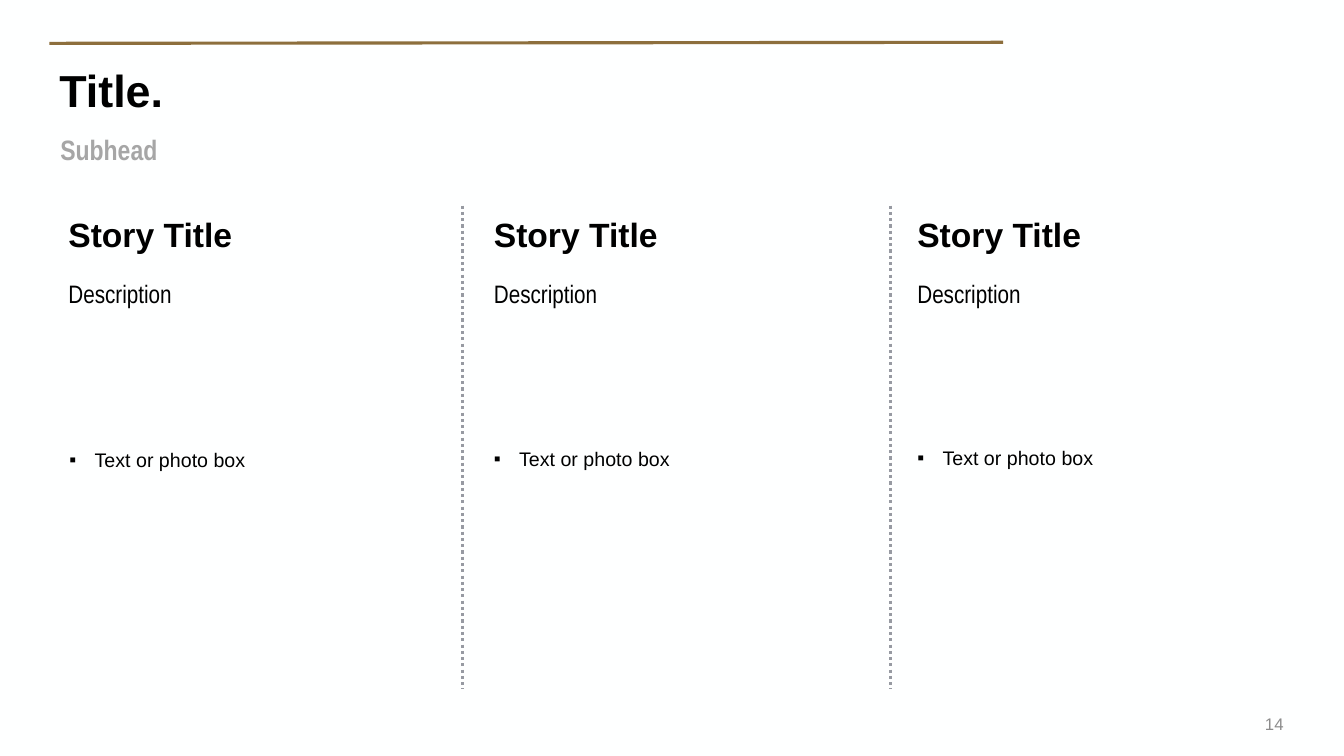
from lxml import etree
from pptx import Presentation
from pptx.dml.color import RGBColor
from pptx.enum.dml import MSO_LINE_DASH_STYLE as Dash
from pptx.enum.shapes import MSO_CONNECTOR as Connector
from pptx.enum.text import MSO_ANCHOR as Anchor, PP_ALIGN as Align
from pptx.oxml.ns import qn
from pptx.util import Inches, Pt


def color(hex_string):
    return RGBColor.from_string(hex_string)


class StorySlide:
    BACKGROUND = "FEFFFF"
    BLACK = "000000"
    SUBHEAD_GRAY = "A6A6A6"
    NUMBER_GRAY = "8C8C8C"
    GOLD = "8D6F3D"
    DIVIDER_GRAY = "979AA2"
    SANS = "Arial"
    NARROW = "Arial Narrow"

    def __init__(self, presentation):
        self.slide = presentation.slides.add_slide(presentation.slide_layouts[6])
        fill = self.slide.background.fill
        fill.solid()
        fill.fore_color.rgb = color(self.BACKGROUND)

    def line(self, start, end, line_color, dash=None):
        connector = self.slide.shapes.add_connector(
            Connector.STRAIGHT, *(Inches(value) for value in (*start, *end)))
        connector.line.color.rgb = color(line_color)
        connector.line.width = Pt(2.25)
        if dash is not None:
            connector.line.dash_style = dash
        etree.SubElement(connector._element.spPr, qn("a:effectLst"))

    def text(self, words, box, size, font_name=SANS, text_color=BLACK, bold=False,
             anchor=Anchor.TOP, align=Align.LEFT, spacing=0.9, bullet=None):
        shape = self.slide.shapes.add_textbox(*(Inches(value) for value in box))
        frame = shape.text_frame
        frame.word_wrap = True
        frame.vertical_anchor = anchor
        paragraph = frame.paragraphs[0]
        paragraph.text = words
        paragraph.alignment = align
        paragraph.line_spacing = spacing
        if bullet:
            self.add_bullet(paragraph, bullet)
        font = paragraph.font
        font.name = font_name
        font.size = Pt(size)
        font.bold = bold
        font.color.rgb = color(text_color)

    def add_bullet(self, paragraph, character):
        properties = paragraph._p.get_or_add_pPr()
        properties.set("marL", str(Inches(0.25)))
        properties.set("indent", str(Inches(-0.25)))
        etree.SubElement(properties, qn("a:buFont"), typeface=self.SANS)
        etree.SubElement(properties, qn("a:buChar"), char=character)


def main():
    presentation = Presentation()
    presentation.slide_width = Inches(13.33)
    presentation.slide_height = Inches(7.5)
    page = StorySlide(presentation)

    # Header
    page.line((9.95, 0.42), (0.49, 0.43), page.GOLD)
    page.text("Title.", (0.49, 0.61, 8.53, 0.63), 32, bold=True, anchor=Anchor.MIDDLE)
    page.text("Subhead", (0.5, 1.3, 12.33, 0.4), 20, page.NARROW,
              page.SUBHEAD_GRAY, bold=True)

    # Story columns: left edge, then left and top of the content box
    column_width = 3.85
    for left, content_left, content_top in (
            (0.58, 0.59, 4.42), (4.8, 4.8, 4.41), (9, 9, 4.4)):
        page.text("Story Title", (left, 2.12, column_width, 0.43), 24, bold=True)
        page.text("Description", (left, 2.75, column_width, 1.35), 18, page.NARROW)
        page.text("Text or photo box", (content_left, content_top, column_width, 2.25),
                  14, bullet="▪")

    # Column dividers
    for x in (4.59, 8.83):
        page.line((x, 2.04), (x, 6.84), page.DIVIDER_GRAY, Dash.ROUND_DOT)

    # Slide number
    page.text("14", (11.63, 6.98, 1.2, 0.4), 12, text_color=page.NUMBER_GRAY,
              anchor=Anchor.MIDDLE, align=Align.RIGHT, spacing=1.0)

    presentation.save("out.pptx")


if __name__ == "__main__":
    main()
